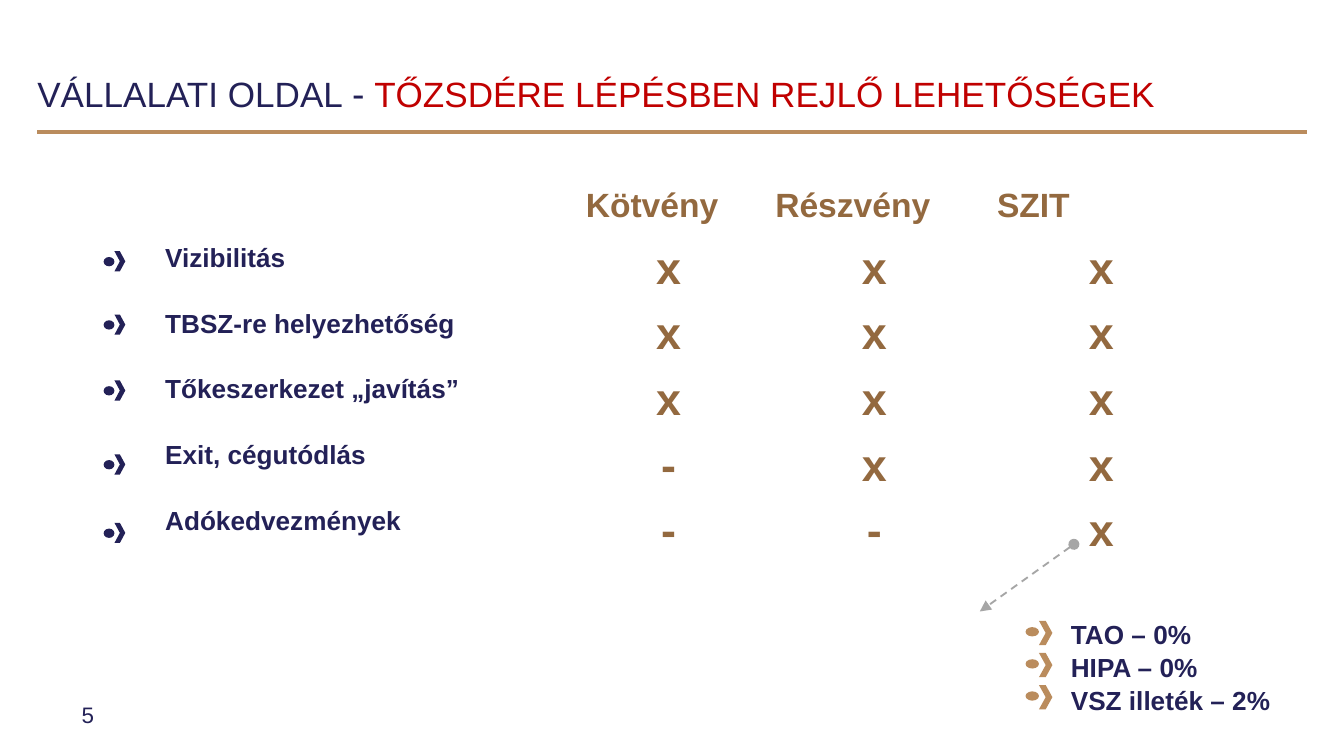
from dataclasses import dataclass

from pptx import Presentation
from pptx.dml.color import RGBColor
from pptx.enum.dml import MSO_LINE_DASH_STYLE as Dash
from pptx.enum.shapes import MSO_CONNECTOR as Connector, MSO_SHAPE as Shape
from pptx.enum.text import MSO_ANCHOR as Anchor, PP_ALIGN as Align
from pptx.oxml.ns import qn
from pptx.util import Pt
from lxml.etree import SubElement


@dataclass(frozen=True)
class Theme:
    font: str = "Arial"
    navy: str = "232157"
    red: str = "C00000"
    gold: str = "BA8C5D"
    brown: str = "93693F"
    grey: str = "A6A6A6"
    title: float = 18.8
    dash: float = 20
    header: float = 18
    mark: float = 24
    body: float = 14
    number: float = 12


@dataclass(frozen=True)
class Span:
    text: str
    size: float
    color: str
    bold: bool = False


@dataclass(frozen=True)
class Label:
    left: float
    top: float
    width: float
    height: float
    spans: tuple[Span, ...]
    inset_left: float = 7.2
    inset_top: float = 5
    anchor: Anchor = Anchor.TOP


@dataclass(frozen=True)
class Marker:
    """A dot followed by a chevron."""
    left: float
    top: float
    width: float
    height: float
    dot_drop: float
    color: str


THEME = Theme()


def write_spans(para, spans: tuple[Span, ...]) -> None:
    for span in spans:
        run = para.add_run()
        run.text = span.text
        formats = {"name": THEME.font, "size": Pt(span.size), "bold": span.bold}
        for key, value in formats.items():
            setattr(run.font, key, value)
        run.font.color.rgb = RGBColor.from_string(span.color)


def draw_label(page, label: Label) -> None:
    box = page.shapes.add_textbox(
        Pt(label.left), Pt(label.top), Pt(label.width), Pt(label.height))
    formats = {
        "word_wrap": True,
        "vertical_anchor": label.anchor,
        "margin_left": Pt(label.inset_left),
        "margin_top": Pt(label.inset_top),
    }
    for key, value in formats.items():
        setattr(box.text_frame, key, value)
    write_spans(box.text_frame.paragraphs[0], label.spans)


def draw_marker(page, marker: Marker) -> None:
    group = page.shapes.add_group_shape()
    parts = (
        (Shape.CHEVRON, marker.left + marker.width, marker.top, marker.height),
        (Shape.OVAL, marker.left, marker.top + marker.dot_drop, 5),
    )
    for kind, left, top, height in parts:
        shape = group.shapes.add_shape(
            kind, Pt(left), Pt(top), Pt(marker.width), Pt(height))
        shape.shadow.inherit = False
        shape.fill.solid()
        shape.fill.fore_color.rgb = RGBColor.from_string(marker.color)
        shape.line.fill.background()


def draw_line(page, start: tuple[float, float], end: tuple[float, float],
              color: str, width: float):
    line = page.shapes.add_connector(
        Connector.STRAIGHT, *(Pt(value) for value in start + end))
    line.line.color.rgb = RGBColor.from_string(color)
    line.line.width = Pt(width)
    SubElement(line._element.spPr, qn("a:effectLst"))
    return line


def draw_table(page, headers: tuple[str, ...], rows: dict[str, str]) -> None:
    widths = (225.4, 101.5, 118.8, 124.6)
    heights = (30.2,) + (34,) * len(rows)
    table = page.shapes.add_table(
        len(heights), len(widths), Pt(82.1), Pt(97.2),
        Pt(sum(widths)), Pt(sum(heights))).table
    table.horz_banding = False
    for column, width in zip(table.columns, widths):
        column.width = Pt(width)
    for row, height in zip(table.rows, heights):
        row.height = Pt(height)

    contents = [("", *headers)] + [(name, *marks) for name, marks in rows.items()]
    margins = {"margin_left": 6.4, "margin_right": 6.4,
               "margin_top": 3.2, "margin_bottom": 3.2}
    for r, texts in enumerate(contents):
        for c, text in enumerate(texts):
            cell = table.cell(r, c)
            cell.fill.background()
            for key, value in margins.items():
                setattr(cell, key, Pt(value))
            if not text:
                continue
            para = cell.text_frame.paragraphs[0]
            if r == 0:
                span = Span(text, THEME.header, THEME.brown, True)
            elif c == 0:
                span = Span(text, THEME.body, THEME.navy, True)
            else:
                span = Span(text, THEME.mark, THEME.brown, True)
                para.alignment = Align.CENTER
            write_spans(para, (span,))


def main() -> None:
    deck = Presentation()
    deck.slide_width, deck.slide_height = Pt(720), Pt(405)
    page = deck.slides.add_slide(deck.slide_layouts[6])

    # Title, rule and page number
    draw_line(page, (20, 70.6), (700, 70.6), THEME.gold, 2)
    draw_label(page, Label(36.7, 372.2, 167.8, 21.6, (
        Span("5", THEME.number, THEME.navy),), inset_top=3.6, anchor=Anchor.MIDDLE))
    draw_label(page, Label(20, 32.4, 612, 27.4, (
        Span("VÁLLALATI OLDAL ", THEME.title, THEME.navy),
        Span("-", THEME.dash, THEME.navy),
        Span(" ", THEME.title, THEME.navy),
        Span("TŐZSDÉRE LÉPÉSBEN REJLŐ LEHETŐSÉGEK", THEME.title, THEME.red),
    ), inset_left=0))

    # Comparison table with its row markers
    draw_table(page, ("Kötvény", "Részvény", "SZIT"), {
        "Vizibilitás": "xxx",
        "TBSZ-re helyezhetőség": "xxx",
        "Tőkeszerkezet „javítás”": "xxx",
        "Exit, cégutódlás": "-xx",
        "Adókedvezmények": "--x",
    })
    for top in (134.6, 168.5, 203.8, 243.4, 280.1):
        draw_marker(page, Marker(55.5, top, 5.8, 10.8, 3.1, THEME.navy))

    # Dashed arrow to the tax benefits
    arrow = draw_line(page, (575.3, 291.6), (524.9, 327.6), THEME.grey, 1)
    arrow.line.dash_style = Dash.DASH
    for tag, kind in (("a:headEnd", "oval"), ("a:tailEnd", "triangle")):
        SubElement(arrow.line._get_or_add_ln(), qn(tag), type=kind)

    # Tax benefits
    benefits = (("TAO – 0%", 99.4), ("HIPA – 0%", 99.4), ("VSZ illeték – 2%", 121.7))
    for i, (text, width) in enumerate(benefits):
        draw_marker(page, Marker(549.4, 332.6 + 17.2 * i, 7.2, 13, 3.4, THEME.gold))
        draw_label(page, Label(566.6, 326.4 + 17.6 * i, width, 19.6, (
            Span(text, THEME.body, THEME.navy, True),)))

    deck.save("out.pptx")


if __name__ == "__main__":
    main()
